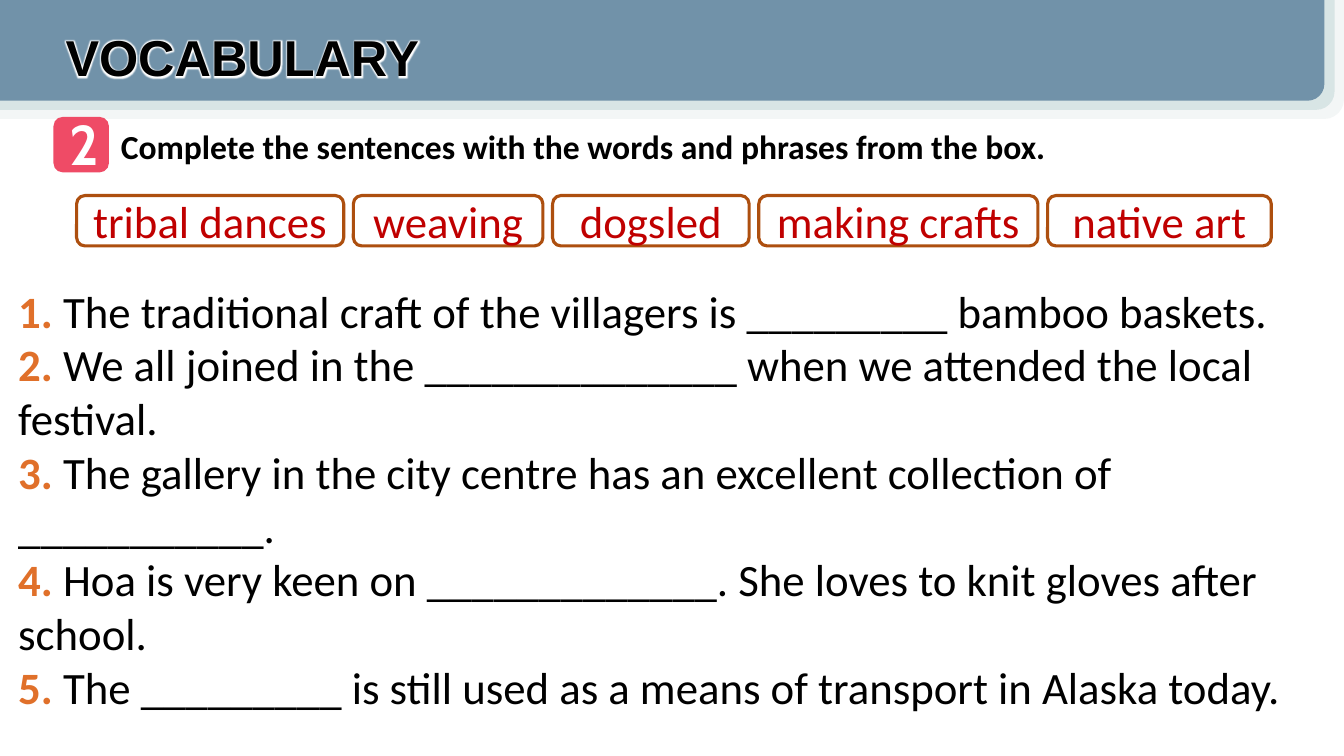
from lxml import etree
from pptx import Presentation
from pptx.dml.color import RGBColor
from pptx.enum.shapes import MSO_SHAPE as Shape
from pptx.enum.text import MSO_ANCHOR as Anchor, MSO_AUTO_SIZE as AutoSize, PP_ALIGN as Align
from pptx.oxml.ns import qn
from pptx.util import Pt

BLACK = RGBColor(0x00, 0x00, 0x00)
WHITE = RGBColor(0xFF, 0xFF, 0xFF)
BAND_OUTER = RGBColor(0xF3, 0xF6, 0xF6)
BAND_MIDDLE = RGBColor(0xD8, 0xE5, 0xE5)
BAND_INNER = RGBColor(0x71, 0x92, 0xA9)
BADGE_PINK = RGBColor(0xEF, 0x4B, 0x66)
NUMBER_ORANGE = RGBColor(0xE0, 0x70, 0x2A)
BORDER_BROWN = RGBColor(0xAD, 0x4F, 0x0F)
WORD_RED = RGBColor(0xC0, 0x00, 0x00)


def add_filled_shape(kind, left, top, width, height, color):
    shape = shapes.add_shape(kind, Pt(left), Pt(top), Pt(width), Pt(height))
    shape.shadow.inherit = False
    shape.fill.solid()
    shape.fill.fore_color.rgb = color
    shape.line.fill.background()
    return shape


def style(font, name, size, color, bold=False):
    font.name, font.size, font.bold = name, Pt(size), bold
    font.color.rgb = color


presentation = Presentation()
presentation.slide_width, presentation.slide_height = Pt(960), Pt(540)
slide = presentation.slides.add_slide(presentation.slide_layouts[1])
shapes = slide.shapes
title, body = slide.placeholders

# Header bands, rounded at the bottom right
for width, height, color in [(960, 85, BAND_OUTER), (953.3, 78.5, BAND_MIDDLE), (946, 72, BAND_INNER)]:
    band = add_filled_shape(Shape.ROUND_1_RECTANGLE, 0, 0, width, height, color)
    band.element.spPr.find(qn("a:xfrm")).set("flipV", "1")

# Title with a white glow, in front of the bands
title.element.getparent().append(title.element)
title.left, title.top, title.width, title.height = Pt(39.6), Pt(15.1), Pt(325.4), Pt(51.1)
title.text_frame.auto_size = AutoSize.NONE
title.text_frame.vertical_anchor = Anchor.TOP
heading = title.text_frame.paragraphs[0]
heading.alignment = Align.LEFT
heading_run = heading.add_run()
heading_run.text = "VOCABULARY"
style(heading_run.font, "Arial", 36, BLACK, True)
effects = etree.Element(qn("a:effectLst"))
glow = etree.SubElement(effects, qn("a:glow"), rad=str(Pt(4)))
etree.SubElement(glow, qn("a:srgbClr"), val=str(WHITE))
heading_run._r.find(qn("a:rPr")).find(qn("a:solidFill")).addnext(effects)

# Numbered instruction
add_filled_shape(Shape.ROUNDED_RECTANGLE, 38.2, 83.5, 39.6, 39.6, BADGE_PINK)
for text, box, font_name, size, color, alignment in [
    ("Complete the sentences with the words and phrases from the box.",
     (79.2, 86.4, 842.4, 36), "Calibri", 24, BLACK, Align.LEFT),
    ("2", (42.5, 74.9, 31, 55.4), "Cabin", 40, WHITE, Align.CENTER),
]:
    label = shapes.add_textbox(*map(Pt, box))
    label.text_frame.word_wrap = True
    paragraph = label.text_frame.paragraphs[0]
    paragraph.text = text
    paragraph.alignment = alignment
    style(paragraph.font, font_name, size, color, True)

# Word bank
WORD_GAP = 6.9
left = 54.7
for word, width in [("tribal dances", 190.8), ("weaving", 135.4), ("dogsled", 140.4),
                    ("making crafts", 199.4), ("native art", 159.8)]:
    word_box = shapes.add_shape(Shape.ROUNDED_RECTANGLE, Pt(left), Pt(139.7), Pt(width), Pt(36))
    word_box.shadow.inherit = False
    word_box.fill.background()
    word_box.line.color.rgb = BORDER_BROWN
    word_box.line.width = Pt(2.25)
    word_box.text_frame.vertical_anchor = Anchor.MIDDLE
    paragraph = word_box.text_frame.paragraphs[0]
    paragraph.text = word
    paragraph.alignment = Align.CENTER
    style(paragraph.font, "Calibri", 32, WORD_RED)
    left += width + WORD_GAP

# Sentences to complete
SENTENCES = [
    "The traditional craft of the villagers is _________ bamboo baskets.",
    "We all joined in the ______________ when we attended the local festival.",
    "The gallery in the city centre has an excellent collection of ___________.",
    "Hoa is very keen on _____________. She loves to knit gloves after school.",
    "The _________ is still used as a means of transport in Alaska today.",
]
body.left, body.top, body.width, body.height = Pt(5.8), Pt(198.7), Pt(957.6), Pt(317.5)
frame = body.text_frame
frame.auto_size = AutoSize.NONE
for number, sentence in enumerate(SENTENCES, 1):
    paragraph = frame.paragraphs[0] if number == 1 else frame.add_paragraph()
    paragraph.space_before = Pt(0)
    paragraph.font.name, paragraph.font.size = "Calibri", Pt(32)
    properties = paragraph._p.get_or_add_pPr()
    properties.set("marL", "0")
    properties.set("indent", "0")
    properties.find(qn("a:spcBef")).addnext(etree.Element(qn("a:buNone")))
    for text, color, bold in [(f"{number}. ", NUMBER_ORANGE, True), (sentence, BLACK, False)]:
        run = paragraph.add_run()
        run.text = text
        run.font.color.rgb = color
        run.font.bold = bold

presentation.save("out.pptx")
